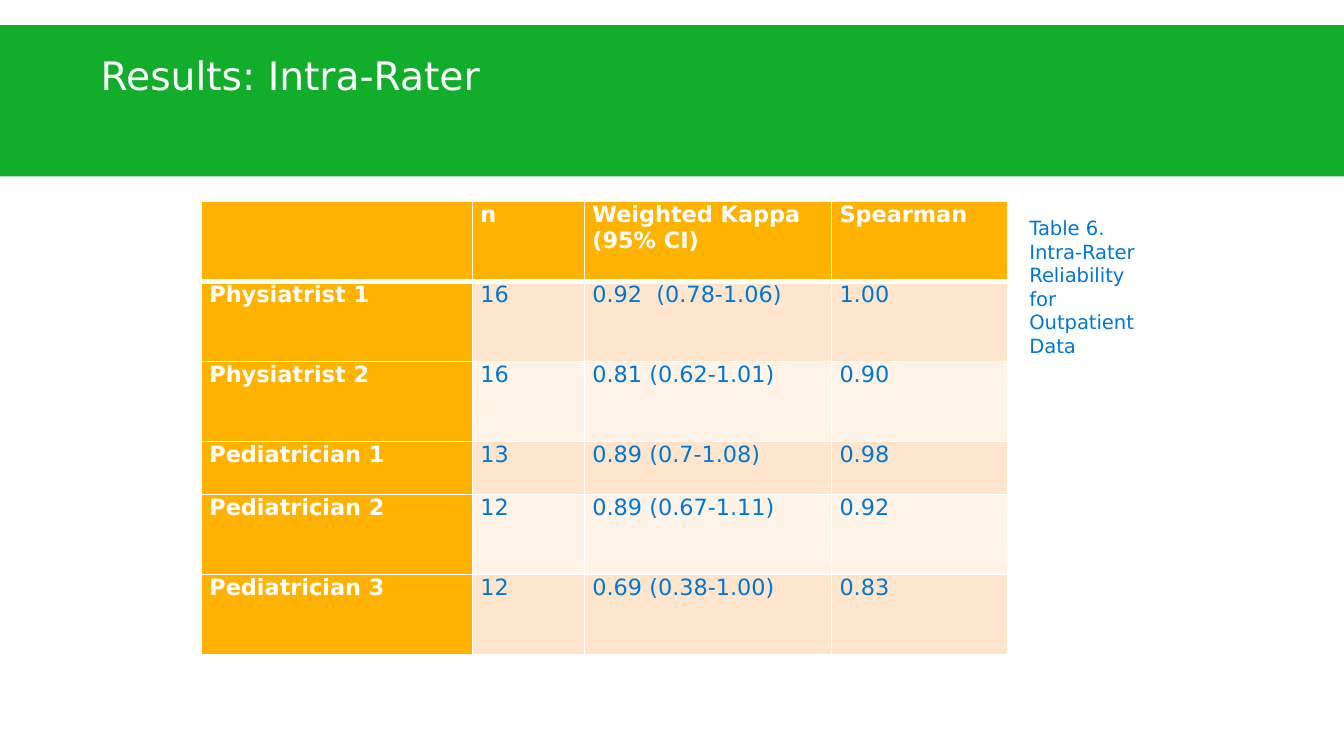
import pptx
import pptx.dml.color
import pptx.enum.shapes
import pptx.oxml
import pptx.oxml.ns
import pptx.util
from pptx.util import Pt

RGBColor = pptx.dml.color.RGBColor
WHITE = RGBColor(0xFF, 0xFF, 0xFF)
GREEN = RGBColor(0x12, 0xAD, 0x2A)
AMBER = RGBColor(0xFF, 0xB3, 0x00)
BLUE = RGBColor(0x00, 0x77, 0xD4)
PEACH = RGBColor(0xFF, 0xE5, 0xCC)
CREAM = RGBColor(0xFF, 0xF2, 0xE7)

RELIABILITY = [
    ("", "n", "Weighted Kappa (95% CI)", "Spearman"),
    ("Physiatrist 1", "16", "0.92  (0.78-1.06)", "1.00"),
    ("Physiatrist 2", "16", "0.81 (0.62-1.01)", "0.90"),
    ("Pediatrician 1", "13", "0.89 (0.7-1.08)", "0.98"),
    ("Pediatrician 2", "12", "0.89 (0.67-1.11)", "0.92"),
    ("Pediatrician 3", "12", "0.69 (0.38-1.00)", "0.83"),
]
COLUMN_WIDTHS = [145.2, 60, 132.4, 94.4]
ROW_HEIGHTS = [42.85, 42.85, 42.85, 28.4, 42.85, 42.85]


class SlideBuilder:
    font_name = "DejaVu Sans"

    def __init__(self, slide):
        self.slide = slide

    def style(self, paragraph, size, color, bold=False):
        font = paragraph.font
        font.name, font.size, font.bold = self.font_name, Pt(size), bold
        font.color.rgb = color

    def band(self, left, top, width, height, color):
        band = self.slide.shapes.add_shape(
            pptx.enum.shapes.MSO_SHAPE.RECTANGLE,
            Pt(left), Pt(top), Pt(width), Pt(height))
        band.shadow.inherit = False
        band.fill.solid()
        band.fill.fore_color.rgb = color
        band.line.fill.background()

    def text(self, left, top, width, height, words, size, color, inset=(7.2, 3.6)):
        frame = self.slide.shapes.add_textbox(
            Pt(left), Pt(top), Pt(width), Pt(height)).text_frame
        frame.word_wrap = True
        frame.margin_left = frame.margin_right = Pt(inset[0])
        frame.margin_top = frame.margin_bottom = Pt(inset[1])
        frame.text = words
        self.style(frame.paragraphs[0], size, color)

    def borders(self, cell, top, bottom):
        """Draw white cell borders; must run before the cell is filled."""
        properties = cell._tc.get_or_add_tcPr()
        for side, width in (("L", 1), ("R", 1), ("T", top), ("B", bottom)):
            properties.append(pptx.oxml.parse_xml(
                f'<a:ln{side} {pptx.oxml.ns.nsdecls("a")} w="{Pt(width)}">'
                f'<a:solidFill><a:srgbClr val="{WHITE}"/></a:solidFill></a:ln{side}>'))

    def table(self, left, top, rows, widths, heights):
        table = self.slide.shapes.add_table(
            len(rows), len(widths), Pt(left), Pt(top),
            Pt(sum(widths)), Pt(sum(heights))).table
        for column, width in zip(table.columns, widths):
            column.width = Pt(width)
        for r, (row, height) in enumerate(zip(rows, heights)):
            table.rows[r].height = Pt(height)
            for c, words in enumerate(row):
                cell = table.cell(r, c)
                heading = r == 0 or c == 0
                self.borders(cell, 3 if r == 1 else 1, 3 if r == 0 else 1)
                cell.fill.solid()
                cell.fill.fore_color.rgb = (
                    AMBER if heading else PEACH if r % 2 else CREAM)
                cell.margin_left = cell.margin_right = Pt(4.2)
                cell.margin_top = cell.margin_bottom = 0
                cell.text = words
                self.style(cell.text_frame.paragraphs[0], 12,
                           WHITE if heading else BLUE, heading)


def main():
    deck = pptx.Presentation()
    deck.slide_width, deck.slide_height = Pt(720), Pt(405)
    builder = SlideBuilder(deck.slides.add_slide(deck.slide_layouts[6]))
    builder.band(0, 13.5, 720, 81, GREEN)
    builder.text(54, 27.2, 612, 67.5, "Results: Intra-Rater", 21, WHITE, (0, 0))
    builder.table(108, 108, RELIABILITY, COLUMN_WIDTHS, ROW_HEIGHTS)
    builder.text(544.4, 112.4, 72, 96.5,
                 "Table 6. Intra-Rater Reliability for Outpatient Data", 10.5, BLUE)
    deck.save("out.pptx")


if __name__ == "__main__":
    main()
